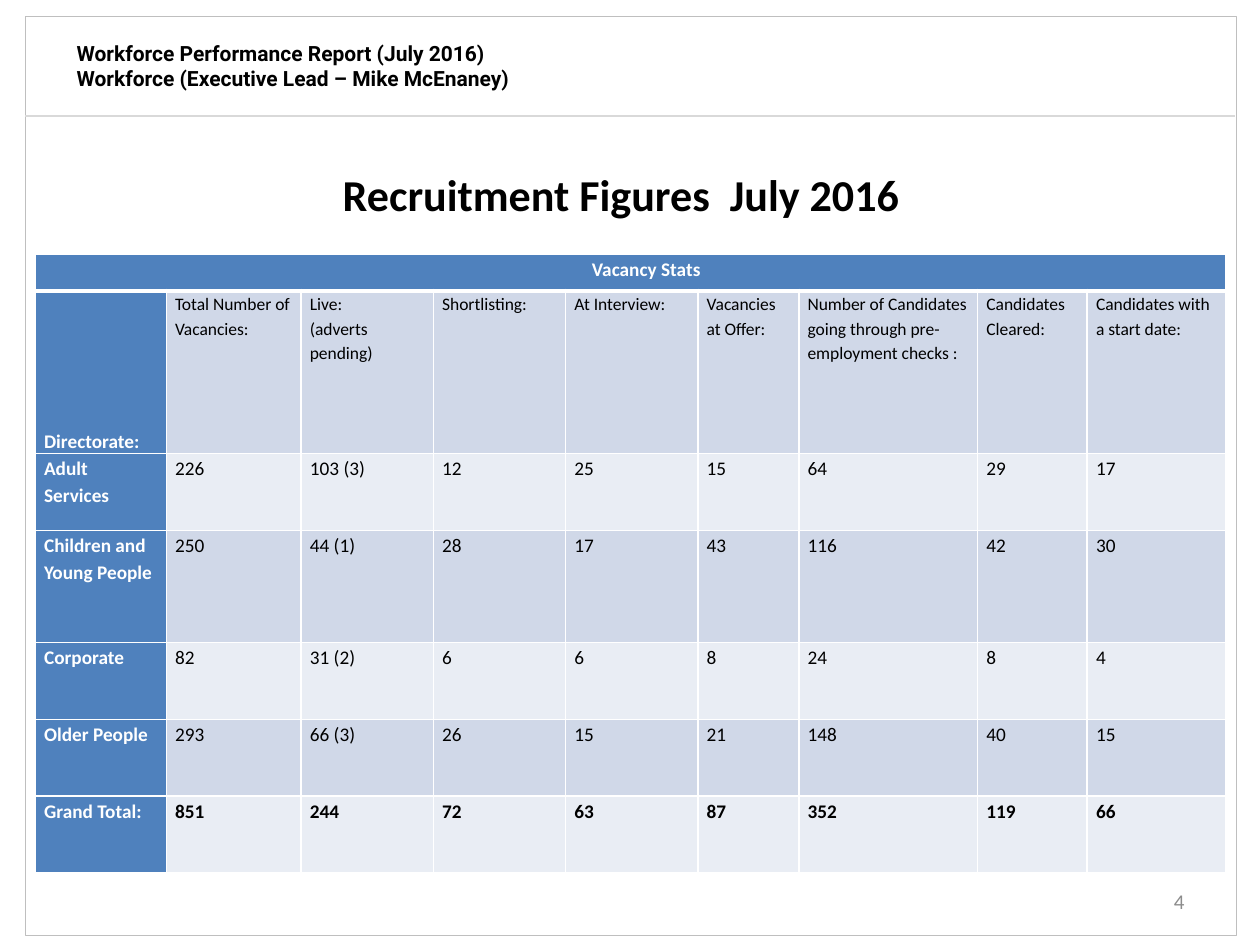
from lxml.etree import SubElement
from pptx import Presentation
from pptx.dml.color import RGBColor
from pptx.enum.shapes import MSO_CONNECTOR as Connector, MSO_SHAPE as Shape
from pptx.enum.text import MSO_ANCHOR as Anchor, PP_ALIGN as Align
from pptx.oxml.ns import qn
from pptx.util import Inches, Pt

COLORS = {
    "black": "000000", "white": "FFFFFF", "gray": "8C8C8C",
    "frame": "BFBFBF", "rule": "D9D9D9",
    "blue": "4F81BD", "dark_band": "D0D8E8", "light_band": "E9EDF4",
}
REPORT = "Workforce Performance Report (July 2016)\vWorkforce (Executive Lead – Mike McEnaney)"
TITLE = "Recruitment Figures  July 2016"
PAGE_NUMBER = "4"
TABLE_TITLE = "Vacancy Stats"
HEADINGS = [
    "Directorate:", "Total Number of Vacancies:", "Live:\n(adverts pending)",
    "Shortlisting:", "At Interview:", "Vacancies at Offer:",
    "Number of Candidates going through pre-employment checks :",
    "Candidates Cleared:", "Candidates with a start date:",
]
VACANCIES = [
    ["Adult Services", "226", "103 (3)", "12", "25", "15", "64", "29", "17"],
    ["Children and Young People", "250", "44 (1)", "28", "17", "43", "116", "42", "30"],
    ["Corporate", "82", "31 (2)", "6", "6", "8", "24", "8", "4"],
    ["Older People", "293", "66 (3)", "26", "15", "21", "148", "40", "15"],
    ["Grand Total:", "851", "244", "72", "63", "87", "352", "119", "66"],
]
COLUMN_WIDTHS = [1.04, 1.07, 1.05, 1.05, 1.05, 0.8, 1.42, 0.87, 1.1]
ROW_HEIGHTS = [0.29, 1.29, 0.61, 0.89, 0.61, 0.61, 0.61]


def rgb(name):
    return RGBColor.from_string(COLORS[name])


def write(frame, text, size, color, bold=False, font="Calibri", align=Align.LEFT, spacing=None):
    frame.text = text
    frame.word_wrap = True
    for para in frame.paragraphs:
        para.alignment = align
        para.line_spacing = spacing
        for span in para.runs:
            span.font.name = font
            span.font.size = Pt(size)
            span.font.bold = bold
            span.font.color.rgb = rgb(color)


def add_text(page, place, text, size, color, anchor=Anchor.MIDDLE, **style):
    box = page.shapes.add_textbox(*map(Inches, place))
    box.text_frame.vertical_anchor = anchor
    write(box.text_frame, text, size, color, **style)


def add_borders(cell, top, bottom):
    properties = cell._tc.get_or_add_tcPr()
    for side, width in (("L", 1), ("R", 1), ("T", top), ("B", bottom)):
        line = SubElement(properties, qn(f"a:ln{side}"), w=str(Pt(width)))
        fill = SubElement(line, qn("a:solidFill"))
        SubElement(fill, qn("a:srgbClr"), val=COLORS["white"])


def add_frame(page):
    frame = page.shapes.add_shape(
        Shape.RECTANGLE, Inches(0.2), Inches(0.13), Inches(9.61), Inches(7.29))
    frame.shadow.inherit = False
    frame.fill.background()
    frame.line.color.rgb = rgb("frame")
    frame.line.width = Pt(0.25)
    rule = page.shapes.add_connector(
        Connector.STRAIGHT, Inches(0.2), Inches(0.92), Inches(9.8), Inches(0.92))
    rule.line.color.rgb = rgb("rule")
    rule.line.width = Pt(0.75)
    SubElement(rule._element.spPr, qn("a:effectLst"))


def add_vacancy_table(page):
    rows = [[TABLE_TITLE] + [""] * (len(HEADINGS) - 1), HEADINGS] + VACANCIES
    table = page.shapes.add_table(
        len(rows), len(HEADINGS), Inches(0.28), Inches(2.02),
        Inches(sum(COLUMN_WIDTHS)), Inches(sum(ROW_HEIGHTS))).table
    for column, width in zip(table.columns, COLUMN_WIDTHS):
        column.width = Inches(width)
    for row, height in zip(table.rows, ROW_HEIGHTS):
        row.height = Inches(height)
    table.cell(0, 0).merge(table.cell(0, len(HEADINGS) - 1))

    for r, values in enumerate(rows):
        band = "dark_band" if r % 2 else "light_band"
        for c, value in enumerate(values):
            cell = table.cell(r, c)
            label = r == 0 or c == 0
            add_borders(cell, top=3 if r == 1 else 1, bottom=3 if r == 0 else 1)
            cell.fill.solid()
            cell.fill.fore_color.rgb = rgb("blue" if label else band)
            cell.margin_left = cell.margin_right = Inches(0.07)
            cell.margin_top = cell.margin_bottom = 0
            write(cell.text_frame, value,
                  size=10 if r == 1 and not label else 11,
                  color="white" if label else "black",
                  bold=label or r == len(rows) - 1,
                  align=Align.CENTER if r == 0 else Align.LEFT,
                  spacing=1.15)

    heading = table.cell(0, 0).text_frame.paragraphs[0]
    heading._p.get_or_add_pPr().set("marL", str(Inches(0.25)))
    table.cell(1, 0).vertical_anchor = Anchor.BOTTOM


def main():
    deck = Presentation()
    deck.slide_width, deck.slide_height = Inches(10), Inches(7.5)
    page = deck.slides.add_slide(deck.slide_layouts[6])
    add_text(page, (0.51, 0.27, 5, 0.5), REPORT, 12, "black",
             anchor=Anchor.TOP, bold=True, font="Roboto")
    add_frame(page)
    add_text(page, (0.43, 1.23, 9, 0.62), TITLE, 25.2, "black", bold=True, align=Align.CENTER)
    add_text(page, (7.17, 6.95, 2.33, 0.4), PAGE_NUMBER, 12, "gray", align=Align.RIGHT)
    add_vacancy_table(page)
    deck.save("out.pptx")


if __name__ == "__main__":
    main()
